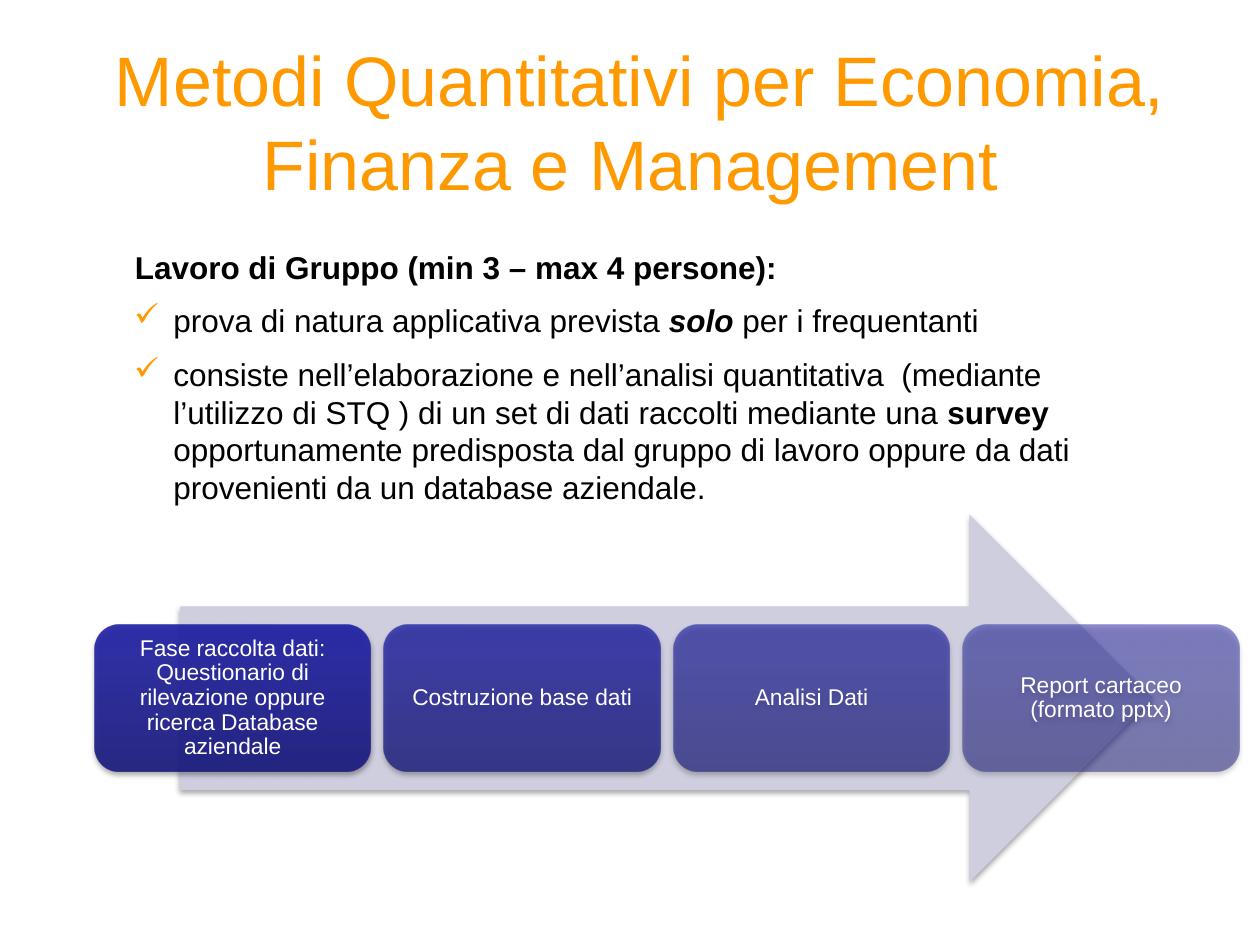
import pptx
import pptx.util
import pptx.oxml
import pptx.oxml.ns
import pptx.dml.color
import pptx.enum.shapes
import pptx.enum.text

Pt = pptx.util.Pt
RGBColor = pptx.dml.color.RGBColor
SHAPE = pptx.enum.shapes.MSO_SHAPE
ANCHOR = pptx.enum.text.MSO_ANCHOR
ALIGN = pptx.enum.text.PP_ALIGN

ORANGE = RGBColor(0xFF, 0x99, 0x00)
BLACK = RGBColor(0x00, 0x00, 0x00)
WHITE = RGBColor(0xFF, 0xFF, 0xFF)
LAVENDER = RGBColor(0xCE, 0xCE, 0xDE)
BLUE_STOPS = ((0, RGBColor(0x1B, 0x1B, 0x7E)),
              (80, RGBColor(0x23, 0x23, 0xA3)),
              (100, RGBColor(0x20, 0x20, 0xA6)))

# Each bullet is a list of (text, bold, italic)
BULLETS = [
    [("prova di natura applicativa prevista ", False, False),
     ("solo", True, True),
     (" per i frequentanti", False, False)],
    [("consiste nell’elaborazione e nell’analisi quantitativa  (mediante "
      "l’utilizzo di STQ ) di un set di dati raccolti mediante una ", False, False),
     ("survey ", True, False),
     ("opportunamente predisposta dal gruppo di lavoro oppure da dati "
      "provenienti da un database aziendale.", False, False)],
]

# Step text and opacity in percent
STEPS = [
    ("Fase raccolta dati: Questionario di rilevazione oppure ricerca Database aziendale", 90),
    ("Costruzione base dati", 77),
    ("Analisi Dati", 63),
    ("Report cartaceo (formato pptx)", 50),
]


def xml(text):
    """Parse a fragment in the DrawingML namespace."""
    head, rest = text.split(" ", 1)
    return pptx.oxml.parse_xml(f"{head} {pptx.oxml.ns.nsdecls('a')} {rest}")


class Builder:
    font_name = "Arial"

    def __init__(self, page):
        self.page = page

    def style(self, paragraph, size, color, bold=False):
        font = paragraph.font
        font.name, font.size, font.bold = self.font_name, Pt(size), bold
        font.color.rgb = color

    def text_box(self, left, top, width, height, anchor=ANCHOR.TOP):
        box = self.page.shapes.add_textbox(Pt(left), Pt(top), Pt(width), Pt(height))
        box.text_frame.word_wrap = True
        box.text_frame.vertical_anchor = anchor
        return box.text_frame

    def title(self, text):
        paragraph = self.text_box(36, 24, 648, 90, ANCHOR.MIDDLE).paragraphs[0]
        paragraph.text = text
        paragraph.alignment = ALIGN.CENTER
        self.style(paragraph, 40, ORANGE)

    def body(self, heading, bullets):
        frame = self.text_box(36, 138, 624, 225)
        first = frame.paragraphs[0]
        first.text = heading
        first._p.get_or_add_pPr().set("marL", str(Pt(34)))
        self.style(first, 18, BLACK, bold=True)
        for spans in bullets:
            self.bullet(frame.add_paragraph(), spans)

    def bullet(self, paragraph, spans):
        properties = paragraph._p.get_or_add_pPr()
        properties.set("marL", str(Pt(56)))
        properties.set("indent", str(Pt(-22.5)))
        properties.append(xml(f'<a:buClr ><a:srgbClr val="{ORANGE}"/></a:buClr>'))
        properties.append(xml('<a:buChar char="✓"/>'))
        paragraph.space_before = Pt(9)
        self.style(paragraph, 18, BLACK)
        for text, bold, italic in spans:
            span = paragraph.add_run()
            span.text = text
            span.font.bold, span.font.italic = bold, italic

    def shape(self, kind, left, top, width, height):
        """Add an outline-free shape with a soft shadow below it."""
        shape = self.page.shapes.add_shape(kind, Pt(left), Pt(top), Pt(width), Pt(height))
        shape.line.fill.background()
        shape.shadow.inherit = False
        effects = shape._element.spPr.find(pptx.oxml.ns.qn("a:effectLst"))
        effects.append(xml(
            f'<a:outerShdw blurRad="{Pt(3.1)}" dist="{Pt(1.8)}" dir="5400000" rotWithShape="0">'
            f'<a:srgbClr val="{BLACK}"><a:alpha val="35000"/></a:srgbClr></a:outerShdw>'))
        return shape

    def arrow(self, left, top, width, height):
        arrow = self.shape(SHAPE.RIGHT_ARROW, left, top, width, height)
        arrow.fill.solid()
        arrow.fill.fore_color.rgb = LAVENDER

    def step(self, left, top, width, height, text, opacity):
        box = self.shape(SHAPE.ROUNDED_RECTANGLE, left, top, width, height)
        # Translucent gradient, darkest at the bottom
        box.fill.gradient()
        box.fill.gradient_angle = 90
        stops = box._element.spPr.find(".//" + pptx.oxml.ns.qn("a:gsLst"))
        for stop in list(stops):
            stops.remove(stop)
        for position, color in BLUE_STOPS:
            stops.append(xml(
                f'<a:gs pos="{position * 1000}"><a:srgbClr val="{color}">'
                f'<a:alpha val="{opacity * 1000}"/></a:srgbClr></a:gs>'))
        # Label
        frame = box.text_frame
        frame.word_wrap = True
        frame.vertical_anchor = ANCHOR.MIDDLE
        frame.margin_left = frame.margin_right = Pt(8)
        frame.margin_top = frame.margin_bottom = Pt(4)
        paragraph = frame.paragraphs[0]
        paragraph.text = text
        paragraph.alignment = ALIGN.CENTER
        paragraph.line_spacing = 0.9
        self.style(paragraph, 13, WHITE)


def main():
    deck = pptx.Presentation()
    deck.slide_width, deck.slide_height = Pt(720), Pt(540)
    builder = Builder(deck.slides.add_slide(deck.slide_layouts[6]))

    builder.title(" Metodi Quantitativi per Economia, Finanza e Management")

    # Process: arrow with the steps in equal columns
    builder.arrow(103, 294, 556, 210)
    for column, (text, opacity) in enumerate(STEPS):
        builder.step(54 + column * 165.4, 357, 157.8, 84, text, opacity)

    builder.body("Lavoro di Gruppo (min 3 – max 4 persone):", BULLETS)
    deck.save("out.pptx")


if __name__ == "__main__":
    main()
